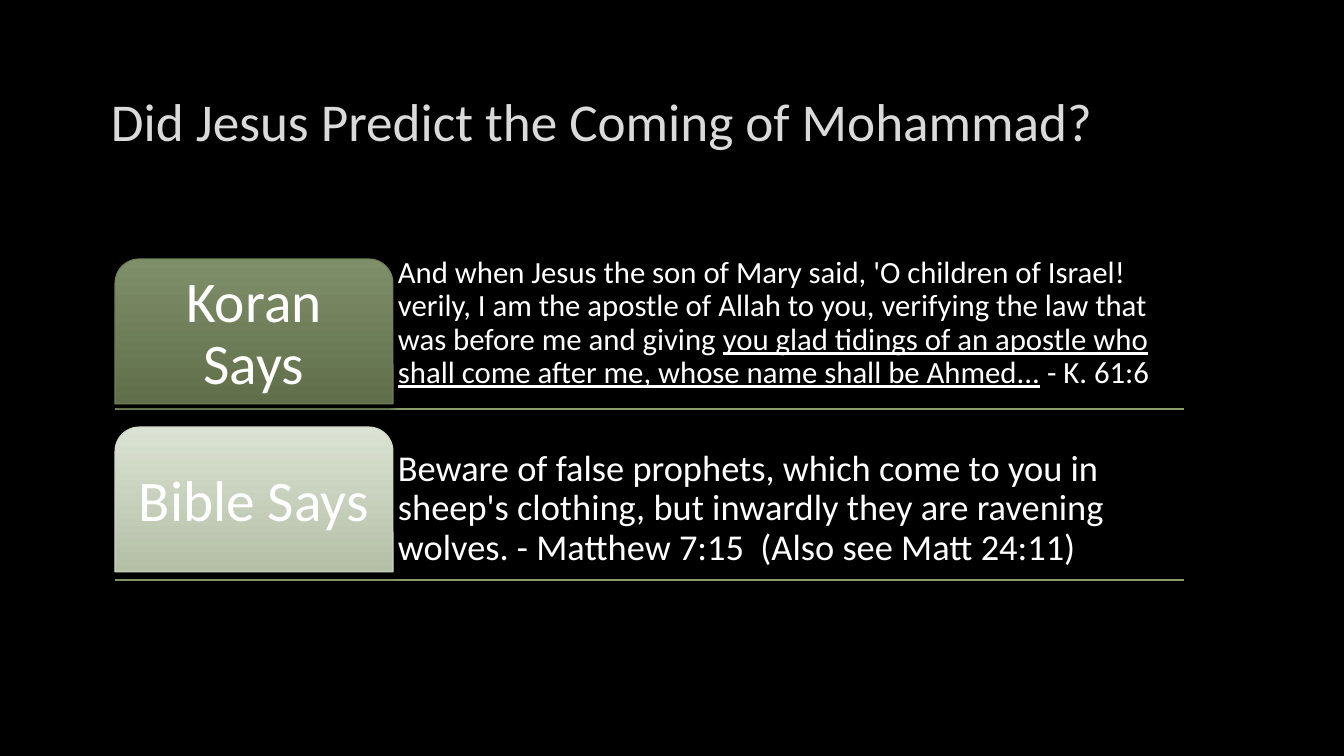
from dataclasses import dataclass

from lxml import etree
from pptx import Presentation
from pptx import util as u
from pptx.dml.color import RGBColor
from pptx.enum import shapes, text
from pptx.oxml import parse_xml
from pptx.oxml.ns import qn

WIDE, HIGH = 1344, 756
SCALE = 12192000 / WIDE
NS = "http://schemas.openxmlformats.org/drawingml/2006/main"
FONT = "Calibri"
WHITE = "FFFFFF"
LEFT, SPLIT, RIGHT = 115, 393, 1184
TALL = 145
SHADE = (
    f'<a:outerShdw xmlns:a="{NS}" blurRad="63500" dist="25400" dir="5400000" '
    'rotWithShape="0"><a:srgbClr val="000000"><a:alpha val="60000"/>'
    "</a:srgbClr></a:outerShdw>"
)


@dataclass
class Row:
    label: str
    top: int
    rule: int
    colours: tuple[str, str]
    edge: str
    quote: list[tuple[str, bool]]
    size: int
    start: int
    depth: int


ROWS = [
    Row("Koran Says", 259, 409, ("7F8F69", "606F4A"), "708157", [
        ("And when Jesus the son of Mary said, 'O children of Israel! verily, "
         "I am the apostle of Allah to you, verifying the law that was before "
         "me and giving ", False),
        ("you glad tidings of an apostle who shall come after me, whose name "
         "shall be Ahmed...", True),
        (" - K. 61:6", False),
    ], 22, 277, 118),
    Row("Bible Says", 427, 580, ("DBE2D3", "B4BFA6"), "D1D9C6", [
        ("Beware of false prophets, which come to you in sheep's clothing, but "
         "inwardly they are ravening wolves. - Matthew 7:15  "
         "(Also see Matt 24:11)", False),
    ], 26, 428, TALL),
]


def px(n: int) -> int:
    return round(n * SCALE)


def box(*sides: int) -> list[int]:
    return [px(n) for n in sides]


def rgb(code: str) -> RGBColor:
    return RGBColor.from_string(code)


def style(run, size: int, colour: str = WHITE) -> None:
    run.font.name = FONT
    run.font.size = u.Pt(size)
    run.font.color.rgb = rgb(colour)


def setup(frame, anchor, inset: int) -> None:
    """Wrap the text and give the frame its anchor and equal insets."""
    frame.word_wrap = True
    frame.auto_size = text.MSO_AUTO_SIZE.NONE
    frame.vertical_anchor = anchor
    frame.margin_left = frame.margin_right = px(inset)
    frame.margin_top = frame.margin_bottom = px(inset)


def rule(slide, y: int) -> None:
    line = slide.shapes.add_connector(
        shapes.MSO_CONNECTOR.STRAIGHT, *box(LEFT, y, RIGHT, y))
    line.line.color.rgb = rgb("899F6A")
    line.line.width = u.Pt(0.75)
    etree.SubElement(line._element.spPr, qn("a:effectLst"))


def quote(slide, row: Row) -> None:
    area = slide.shapes.add_textbox(
        *box(SPLIT, row.start, RIGHT - SPLIT, row.depth))
    setup(area.text_frame, text.MSO_ANCHOR.BOTTOM, 5)
    para = area.text_frame.paragraphs[0]
    para.line_spacing = 0.9
    for words, under in row.quote:
        run = para.add_run()
        run.text = words
        style(run, row.size)
        run.font.underline = under


def tab(slide, row: Row) -> None:
    card = slide.shapes.add_shape(
        shapes.MSO_SHAPE.ROUND_2_SAME_RECTANGLE,
        *box(LEFT, row.top, SPLIT - LEFT, TALL))
    card.adjustments[0] = 0.167
    card.adjustments[1] = 0
    card.fill.gradient()
    card.fill.gradient_angle = 270
    for stop, code in zip(card.fill.gradient_stops, row.colours):
        stop.color.rgb = rgb(code)
    card.line.color.rgb = rgb(row.edge)
    card.line.width = u.Pt(0.75)
    card.shadow.inherit = False
    card._element.spPr.find(qn("a:effectLst")).append(parse_xml(SHADE))
    setup(card.text_frame, text.MSO_ANCHOR.MIDDLE, 9)
    card.text_frame.text = row.label
    para = card.text_frame.paragraphs[0]
    para.alignment = text.PP_ALIGN.CENTER
    para.line_spacing = 0.9
    style(para.runs[0], 41)


def head(slide, words: str) -> None:
    title = slide.shapes.title
    title.left, title.top, title.width, title.height = box(101, 67, 1141, 107)
    setup(title.text_frame, text.MSO_ANCHOR.MIDDLE, 10)
    title.text_frame.text = words
    para = title.text_frame.paragraphs[0]
    para.alignment = text.PP_ALIGN.LEFT
    style(para.runs[0], 38, "DADADA")


def main() -> None:
    deck = Presentation()
    deck.slide_width, deck.slide_height = box(WIDE, HIGH)
    slide = deck.slides.add_slide(deck.slide_layouts[5])
    slide.background.fill.solid()
    slide.background.fill.fore_color.rgb = rgb("000000")
    head(slide, "Did Jesus Predict the Coming of Mohammad?")
    for row in ROWS:
        rule(slide, row.rule)
    for row in ROWS:
        quote(slide, row)
        tab(slide, row)
    deck.save("out.pptx")


if __name__ == "__main__":
    main()
